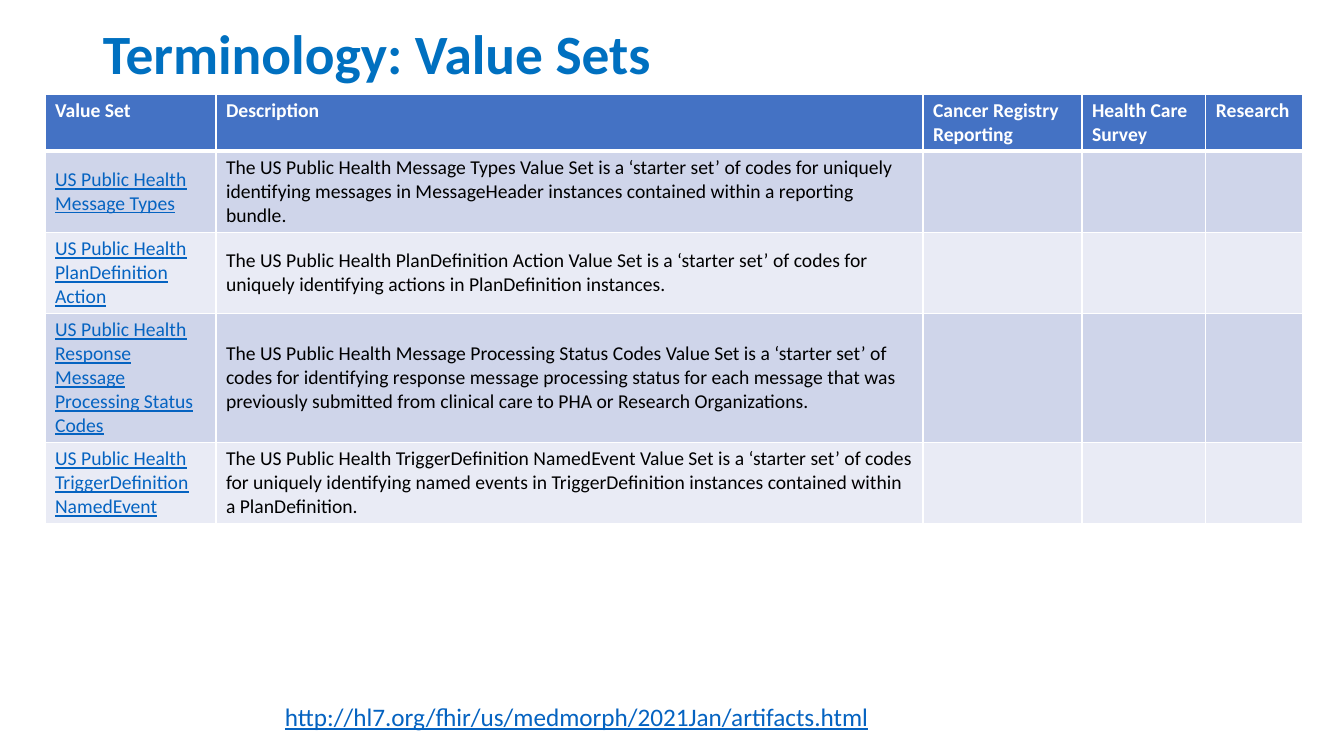
"""Build the slide listing the public health terminology value sets."""
from dataclasses import dataclass

from lxml import etree
from pptx import Presentation
from pptx.dml.color import RGBColor
from pptx.enum.text import MSO_ANCHOR
from pptx.oxml.ns import qn
from pptx.util import Emu, Pt

TOP, MIDDLE = MSO_ANCHOR.TOP, MSO_ANCHOR.MIDDLE
EMU_PER_INCH, PX_PER_INCH = 914400, 100.8
FONT = "Calibri"
COLORS = {
    "title": "0070C0",
    "header": "4472C4",
    "odd": "CFD5EA",
    "even": "E9EBF5",
    "rule": "FFFFFF",
    "header_text": "FFFFFF",
    "text": "000000",
    "link": "0563C1",
}


@dataclass(frozen=True)
class Style:
    size: float
    color: str
    bold: bool = False
    underline: bool = False


@dataclass(frozen=True)
class Caption:
    text: str
    left: int
    top: int
    width: int
    height: int
    style: Style
    anchor: MSO_ANCHOR
    spacing: float = 1.0


@dataclass(frozen=True)
class Column:
    heading: str
    width: int


@dataclass(frozen=True)
class ValueSet:
    name: str
    description: str
    height: int


HEADING = Style(14, "header_text", bold=True)
BODY = Style(14, "text")
LINK = Style(14, "link", underline=True)

CAPTIONS = [
    Caption("Terminology: Value Sets", 93, 19, 1159, 75,
            Style(39.6, "title", bold=True), MIDDLE, 0.9),
    Caption("http://hl7.org/fhir/us/medmorph/2021Jan/artifacts.html", 275, 696, 672, 40,
            Style(18, "link", underline=True), TOP),
]
COLUMNS = [
    Column("Value Set", 171),
    Column("Description", 707),
    Column("Cancer Registry Reporting", 159),
    Column("Health Care Survey", 124),
    Column("Research", 97),
]
VALUE_SETS = [
    ValueSet("US Public Health Message Types",
             "The US Public Health Message Types Value Set is a ‘starter set’ of codes for "
             "uniquely identifying messages in MessageHeader instances contained within a "
             "reporting bundle.", 81),
    ValueSet("US Public Health PlanDefinition Action",
             "The US Public Health PlanDefinition Action Value Set is a ‘starter set’ of codes "
             "for uniquely identifying actions in PlanDefinition instances.", 81),
    ValueSet("US Public Health Response Message Processing Status Codes",
             "The US Public Health Message Processing Status Codes Value Set is a ‘starter set’ "
             "of codes for identifying response message processing status for each message that "
             "was previously submitted from clinical care to PHA or Research Organizations.", 129),
    ValueSet("US Public Health TriggerDefinition NamedEvent",
             "The US Public Health TriggerDefinition NamedEvent Value Set is a ‘starter set’ of "
             "codes for uniquely identifying named events in TriggerDefinition instances "
             "contained within a PlanDefinition.", 81),
]
TABLE_LEFT, TABLE_TOP, HEADER_HEIGHT = 45, 94, 57
THIN, THICK = 1, 3


def px(length: int) -> Emu:
    return Emu(round(length * EMU_PER_INCH / PX_PER_INCH))


def rgb(color: str) -> RGBColor:
    return RGBColor.from_string(COLORS[color])


def add_run(paragraph, text: str, style: Style) -> None:
    run = paragraph.add_run()
    run.text = text
    run.font.name = FONT
    run.font.size = Pt(style.size)
    run.font.bold = style.bold
    run.font.underline = style.underline
    run.font.color.rgb = rgb(style.color)


def add_caption(slide, caption: Caption) -> None:
    box = slide.shapes.add_textbox(px(caption.left), px(caption.top),
                                   px(caption.width), px(caption.height))
    frame = box.text_frame
    frame.word_wrap = True
    frame.vertical_anchor = caption.anchor
    paragraph = frame.paragraphs[0]
    paragraph.line_spacing = caption.spacing
    add_run(paragraph, caption.text, caption.style)


def rule_cell(cell, top: int, bottom: int) -> None:
    properties = cell._tc.get_or_add_tcPr()
    widths = {"a:lnL": THIN, "a:lnR": THIN, "a:lnT": top, "a:lnB": bottom}
    for position, (side, width) in enumerate(widths.items()):
        line = etree.Element(qn(side), w=str(Pt(width)))
        fill = etree.SubElement(line, qn("a:solidFill"))
        etree.SubElement(fill, qn("a:srgbClr"), val=COLORS["rule"])
        properties.insert(position, line)


def fill_cell(cell, text: str, style: Style, fill: str, anchor: MSO_ANCHOR) -> None:
    cell.fill.solid()
    cell.fill.fore_color.rgb = rgb(fill)
    cell.vertical_anchor = anchor
    if text:
        add_run(cell.text_frame.paragraphs[0], text, style)


def add_value_set_table(slide) -> None:
    heights = [HEADER_HEIGHT] + [value_set.height for value_set in VALUE_SETS]
    table = slide.shapes.add_table(
        len(heights), len(COLUMNS), px(TABLE_LEFT), px(TABLE_TOP),
        px(sum(column.width for column in COLUMNS)), px(sum(heights))).table
    for row, height in zip(table.rows, heights):
        row.height = px(height)
    for index, column in enumerate(COLUMNS):
        table.columns[index].width = px(column.width)
        heading = table.cell(0, index)
        fill_cell(heading, column.heading, HEADING, "header", TOP)
        rule_cell(heading, THIN, THICK)
    for number, value_set in enumerate(VALUE_SETS, start=1):
        band = "odd" if number % 2 else "even"
        texts = {0: (value_set.name, LINK), 1: (value_set.description, BODY)}
        for index in range(len(COLUMNS)):
            cell = table.cell(number, index)
            text, style = texts.get(index, ("", BODY))
            fill_cell(cell, text, style, band, MIDDLE if text else TOP)
            rule_cell(cell, THICK if number == 1 else THIN, THIN)


def main() -> None:
    presentation = Presentation()
    presentation.slide_width, presentation.slide_height = px(1344), px(756)
    slide = presentation.slides.add_slide(presentation.slide_layouts[6])
    title, address = CAPTIONS
    add_caption(slide, title)
    add_value_set_table(slide)
    add_caption(slide, address)
    presentation.save("out.pptx")


if __name__ == "__main__":
    main()
